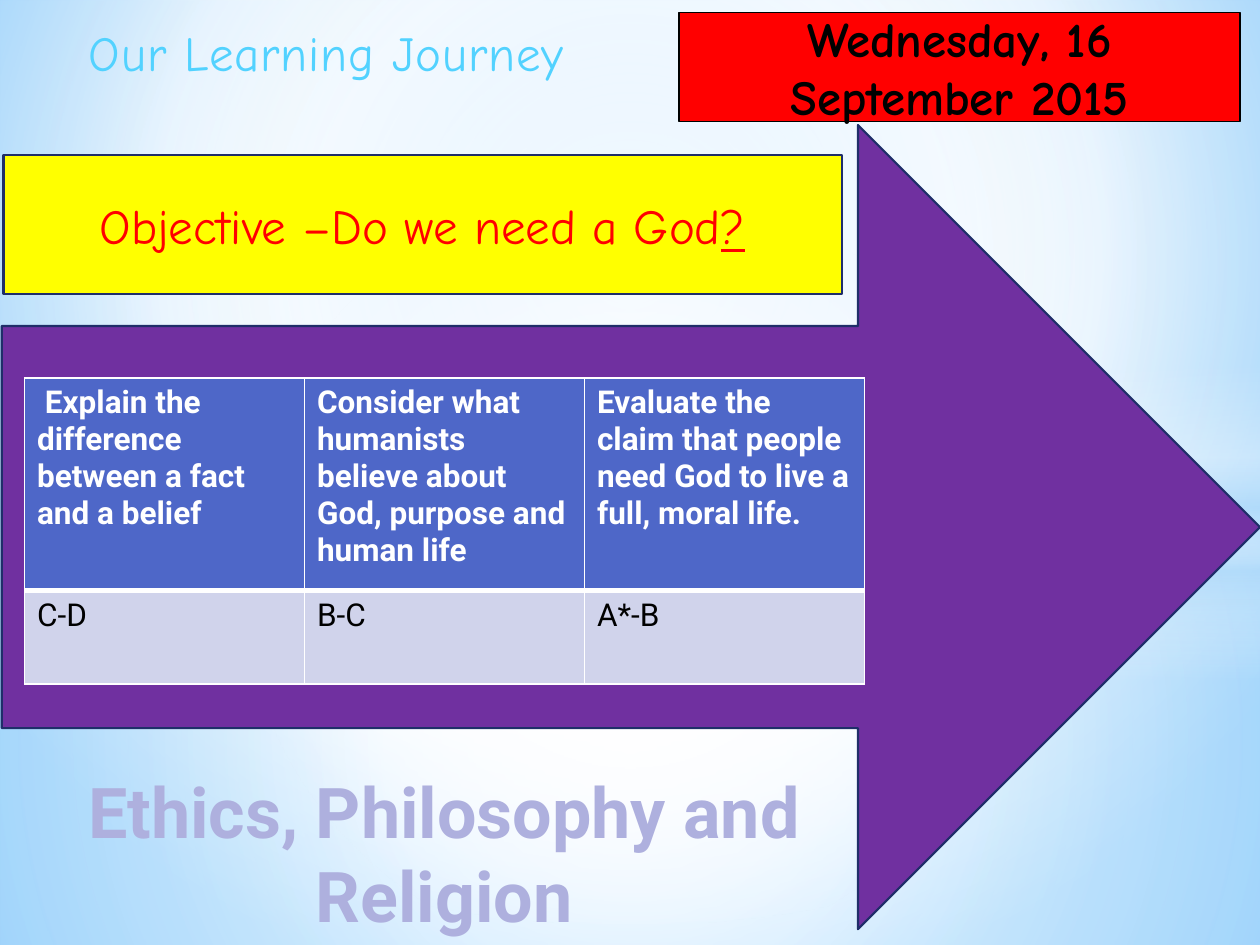
from lxml import etree
from pptx import Presentation
from pptx.dml.color import RGBColor
from pptx.enum import shapes, text
from pptx.oxml import ns
from pptx.util import Pt

COLORS = {
    "white": "FFFFFF", "black": "000000", "red": "FF0000", "yellow": "FFFF00",
    "purple": "7030A0", "navy": "1F2E69", "sky": "52D2FF", "lilac": "AEB0DE",
    "header": "4E67C8", "body": "D0D3EB", "mist": "B4DCFA",
    "pale": "9ED5FF", "deep": "5BB9FF",
}
COMIC, ROBOTO = "Comic Neue", "Roboto"
CENTER = (50, 50, 50, 50)
SHAPE = shapes.MSO_SHAPE

# Backdrop layers: shape, box, stops (position, colour, opacity), focus
LAYERS = [
    (SHAPE.RECTANGLE, (0, 304.5, 720, 235.5),
     [(0, "white", 91), (37, "white", 76), (100, "mist", 79)], CENTER),
    (SHAPE.RECTANGLE, (0, 0, 720, 304.5),
     [(0, "white", 89), (48, "white", 62), (100, "mist", 79)], CENTER),
    (SHAPE.RECTANGLE, (0, 209, 720, 180),
     [(0, "white", 0), (29, "white", 30), (45, "mist", 40),
      (55, "white", 26), (65, "mist", 60), (100, "white", 0)], None),
    (SHAPE.OVAL, (0, 126, 720, 402), [(0, "white", 100), (54, "white", 0)], CENTER),
]
GOALS = [
    (" Explain the difference between a fact and a belief", "C-D"),
    ("Consider what humanists believe about God, purpose and human life", "B-C"),
    ("Evaluate the claim that people need God to live a full, moral life.", "A*-B"),
]


def rgb(name):
    return RGBColor.from_string(COLORS[name])


def add_node(parent, tag, **attributes):
    node = etree.SubElement(parent, ns.qn(tag))
    for key, value in attributes.items():
        node.set(key, str(value))
    return node


def paint_gradient(fill, owner, stops, focus):
    """Fill with a gradient: circular around focus, or vertical without one."""
    fill.solid()
    solid = next(owner.iter(ns.qn("a:solidFill")))
    gradient = etree.Element(ns.qn("a:gradFill"), rotWithShape="1")
    stop_list = add_node(gradient, "a:gsLst")
    for position, color, opacity in stops:
        stop = add_node(stop_list, "a:gs", pos=position * 1000)
        shade = add_node(stop, "a:srgbClr", val=COLORS[color])
        if opacity < 100:
            add_node(shade, "a:alpha", val=opacity * 1000)
    if focus:
        circle = add_node(gradient, "a:path", path="circle")
        sides = {side: share * 1000 for side, share in zip("ltrb", focus)}
        add_node(circle, "a:fillToRect", **sides)
    else:
        add_node(gradient, "a:lin", ang=90 * 60000, scaled=0)
    solid.getparent().replace(solid, gradient)


def write_text(frame, words, font=ROBOTO, size=28, color="black", bold=False,
               underline=False, align=text.PP_ALIGN.CENTER):
    """Append a formatted span to the last paragraph of the frame."""
    frame.word_wrap = True
    para = frame.paragraphs[-1]
    para.alignment = align
    span = para.add_run()
    span.text = words
    span.font.name, span.font.size = font, Pt(size)
    span.font.bold, span.font.underline = bold, underline
    span.font.color.rgb = rgb(color)
    return span


def add_block(page, kind, box, fill=None, line=None, width=1.25):
    block = page.shapes.add_shape(kind, *map(Pt, box))
    block.shadow.inherit = False
    if fill:
        block.fill.solid()
        block.fill.fore_color.rgb = rgb(fill)
    if line:
        block.line.color.rgb = rgb(line)
        block.line.width = Pt(width)
    else:
        block.line.fill.background()
    block.text_frame.vertical_anchor = text.MSO_ANCHOR.MIDDLE
    return block


def add_backdrop(page):
    fill = page.background.fill
    fill.solid()
    paint_gradient(fill, page.element.cSld,
                   [(0, "pale", 100), (60, "white", 100), (100, "deep", 100)],
                   (20, 10, 20, 60))
    for kind, box, stops, focus in LAYERS:
        layer = add_block(page, kind, box)
        paint_gradient(layer.fill, layer.element.spPr, stops, focus)


def place_title(page, box):
    title = page.shapes.title
    title.left, title.top, title.width, title.height = map(Pt, box)
    frame = title.text_frame
    frame.vertical_anchor = text.MSO_ANCHOR.TOP
    frame.auto_size = text.MSO_AUTO_SIZE.NONE
    span = write_text(frame, "Our Learning Journey", COMIC, color="sky")
    span.font._element.set("spc", "50")
    # Bring the title in front of the backdrop
    title.element.getparent().append(title.element)


def add_date(page, box):
    block = add_block(page, SHAPE.RECTANGLE, box, "red", "black", 0.75)
    write_text(block.text_frame, "Wednesday, 16 September 2015", COMIC, bold=True)


def add_objective(page, box):
    frame = add_block(page, SHAPE.RECTANGLE, box, "yellow", "navy").text_frame
    write_text(frame, "Objective –Do we need a God", COMIC, color="red")
    write_text(frame, "?", COMIC, color="red", underline=True)


def add_subject(page, box):
    frame = page.shapes.add_textbox(*map(Pt, box)).text_frame
    write_text(frame, "Ethics, Philosophy and Religion", size=40,
               color="lilac", bold=True)


def set_borders(cell, **widths):
    properties = cell._tc.get_or_add_tcPr()
    for index, side in enumerate("LRTB"):
        line = etree.Element(ns.qn("a:ln" + side), w=str(Pt(widths.get(side, 1))))
        add_node(add_node(line, "a:solidFill"), "a:srgbClr", val=COLORS["white"])
        properties.insert(index, line)


def add_goals(page, box, row_heights):
    table = page.shapes.add_table(2, len(GOALS), *map(Pt, box)).table
    for row, height in zip(table.rows, row_heights):
        row.height = Pt(height)
    for column, goal in enumerate(GOALS):
        table.columns[column].width = Pt(box[2] / len(GOALS))
        for row, words in enumerate(goal):
            cell = table.cell(row, column)
            is_header = row == 0
            cell.fill.solid()
            cell.fill.fore_color.rgb = rgb("header" if is_header else "body")
            set_borders(cell, **({"B": 3} if is_header else {"T": 3}))
            write_text(cell.text_frame, words, size=18, bold=is_header,
                       color="white" if is_header else "black",
                       align=text.PP_ALIGN.LEFT)


def main():
    deck = Presentation()
    deck.slide_width, deck.slide_height = Pt(720), Pt(540)
    page = deck.slides.add_slide(deck.slide_layouts[5])
    add_backdrop(page)
    add_date(page, (388, 7, 320.5, 62.5))
    add_objective(page, (2, 88.5, 479, 79.5))
    add_block(page, SHAPE.RIGHT_ARROW, (1, 71.5, 719, 459.5), "purple", "navy")
    place_title(page, (1, 9.5, 371.5, 41))
    add_subject(page, (0, 435.5, 507.5, 104.5))
    add_goals(page, (14, 216, 480, 175), (121.5, 53.5))
    deck.save("out.pptx")


if __name__ == "__main__":
    main()
